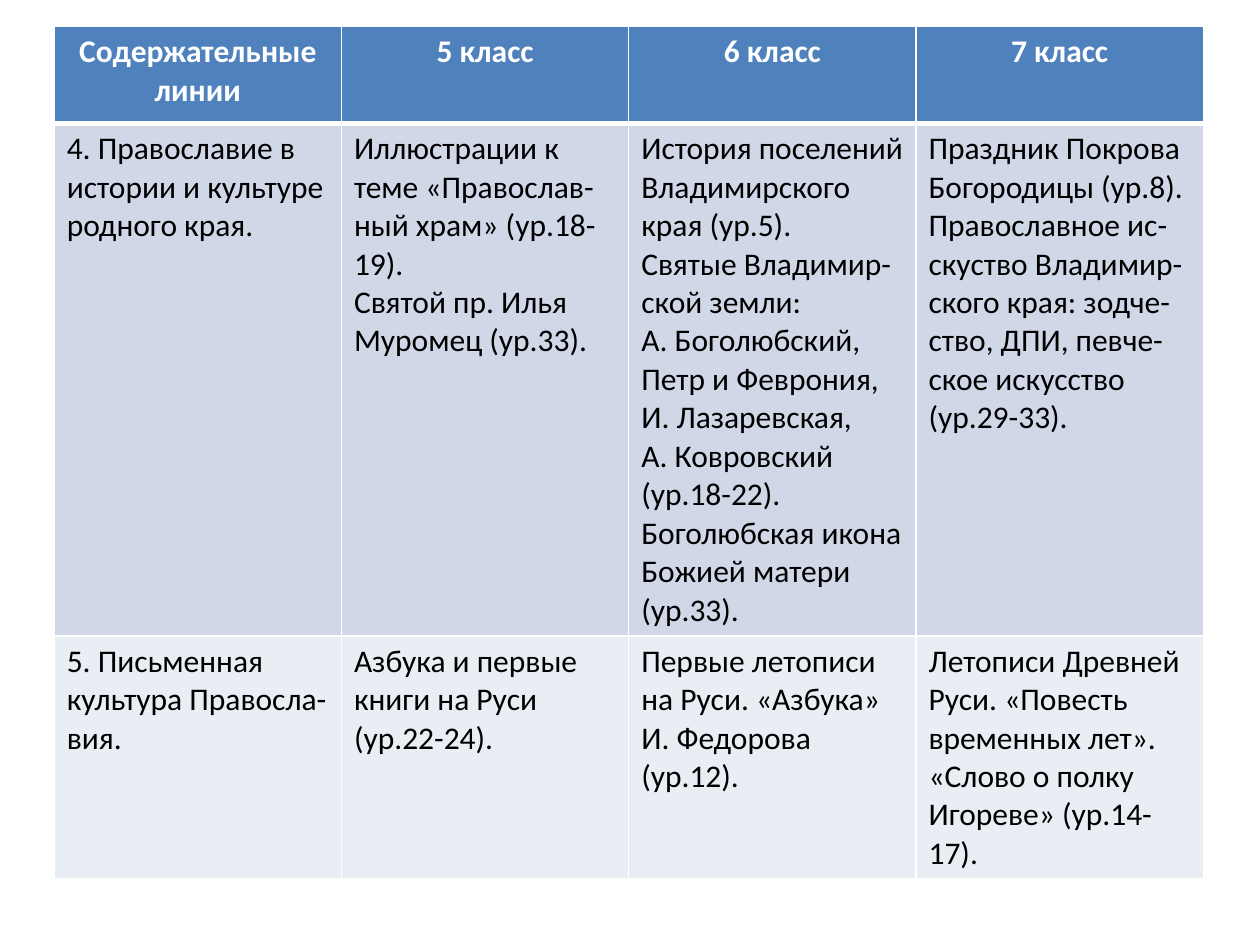
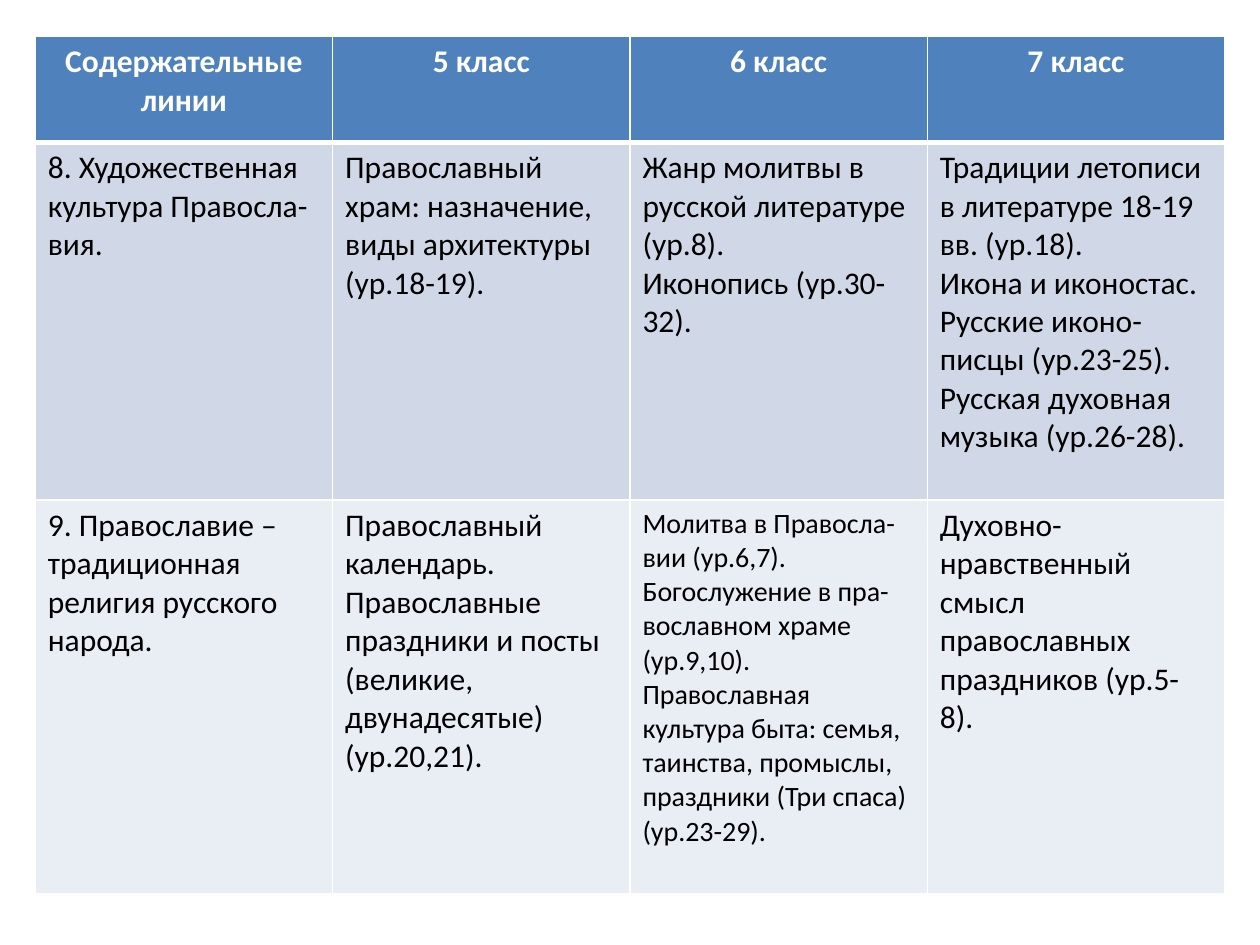
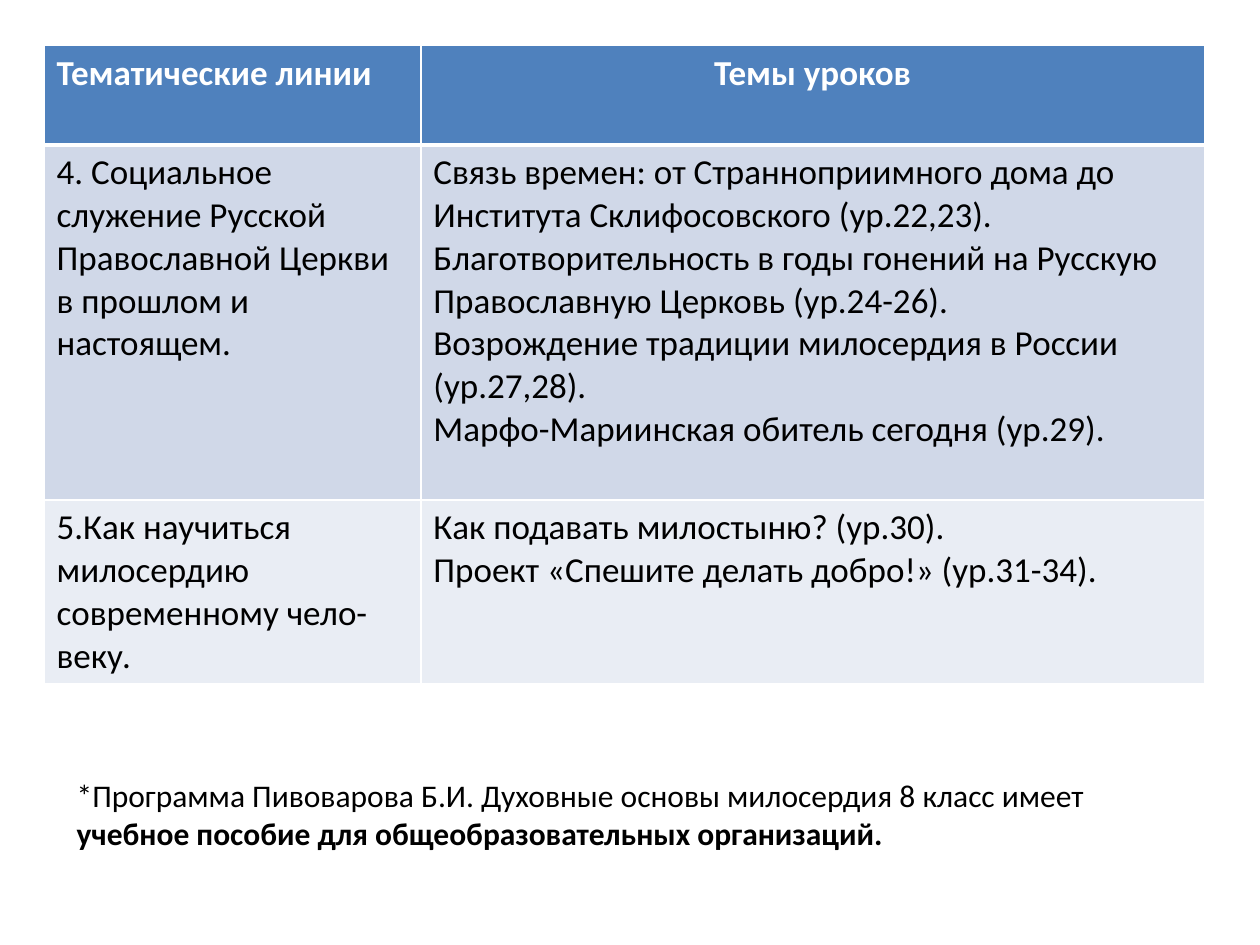
from pptx import Presentation
from pptx.dml.color import RGBColor
from pptx.enum.text import PP_ALIGN
from pptx.oxml import parse_xml
from pptx.oxml.ns import nsdecls
from pptx.util import Inches, Pt

FONT = "Calibri"
WHITE, BLACK = "FFFFFF", "000000"
HEADER_FILL = "4F81BD"
BAND_FILLS = ("D0D8E8", "E9EDF4")
GRADE_HEADERS = ["Содержательные линии", "5 класс", "6 класс", "7 класс"]

HISTORY_ROWS = [
    [
        "4. Православие в истории и культуре родного края.",
        "Иллюстрации к теме «Православ-ный храм» (ур.18-19).\n"
        "Святой пр. Илья Муромец (ур.33).",
        "История поселений Владимирского края (ур.5).\n"
        "Святые Владимир-ской земли:\n"
        "А. Боголюбский, Петр и Феврония, И. Лазаревская,\n"
        "А. Ковровский (ур.18-22).\n"
        "Боголюбская икона Божией матери (ур.33).",
        "Праздник Покрова Богородицы (ур.8).\n"
        "Православное ис-скуство Владимир-ского края: зодче-ство, ДПИ, "
        "певче-ское искусство (ур.29-33).",
    ],
    [
        "5. Письменная культура Правосла-вия.",
        "Азбука и первые книги на Руси (ур.22-24).",
        "Первые летописи на Руси. «Азбука» И. Федорова (ур.12).",
        "Летописи Древней Руси. «Повесть временных лет». "
        "«Слово о полку Игореве» (ур.14-17).",
    ],
]

ART_ROWS = [
    [
        "8. Художественная культура Правосла-вия.",
        "Православный храм: назначение, виды архитектуры (ур.18-19).",
        "Жанр молитвы в русской литературе (ур.8).\nИконопись (ур.30-32).",
        "Традиции летописи в литературе 18-19 вв. (ур.18).\n"
        "Икона и иконостас. Русские иконо-писцы (ур.23-25).\n"
        "Русская духовная музыка (ур.26-28).",
    ],
    [
        "9. Православие – традиционная религия русского народа.",
        "Православный календарь. Православные праздники и посты "
        "(великие, двунадесятые) (ур.20,21).",
        "Молитва в Правосла-вии (ур.6,7).\n"
        "Богослужение в пра-вославном храме (ур.9,10).\n"
        "Православная культура быта: семья, таинства, промыслы, "
        "праздники (Три спаса) (ур.23-29).",
        "Духовно-нравственный смысл православных праздников (ур.5-8).",
    ],
]

MERCY_ROWS = [
    [
        "4. Социальное служение Русской Православной Церкви в прошлом и настоящем.",
        "Связь времен: от Странноприимного дома до Института Склифосовского (ур.22,23).\n"
        "Благотворительность в годы гонений на Русскую Православную Церковь (ур.24-26).\n"
        "Возрождение традиции милосердия в России (ур.27,28).\n"
        "Марфо-Мариинская обитель сегодня (ур.29).",
    ],
    [
        "5.Как научиться милосердию современному чело-веку.",
        "Как подавать милостыню? (ур.30).\n"
        "Проект «Спешите делать добро!» (ур.31-34).",
    ],
]


def color(value):
    """Turn a hex string into a colour."""
    return RGBColor.from_string(value)


def format_text(text_frame, size, font_color=BLACK, bold=False, align=PP_ALIGN.LEFT):
    """Format every run of a text frame alike."""
    for paragraph in text_frame.paragraphs:
        paragraph.alignment = align
        for run in paragraph.runs:
            run.font.name = FONT
            run.font.size = Pt(size)
            run.font.bold = bold
            run.font.color.rgb = color(font_color)


def set_borders(cell, top=1, bottom=1):
    """Draw white borders of the given point widths round a cell."""
    properties = cell._tc.get_or_add_tcPr()
    for side, width in (("L", 1), ("R", 1), ("T", top), ("B", bottom)):
        properties.append(parse_xml(
            f'<a:ln{side} {nsdecls("a")} w="{Pt(width)}"><a:solidFill>'
            f'<a:srgbClr val="{WHITE}"/></a:solidFill></a:ln{side}>'))


def fill_cell(cell, text, fill, size, **text_format):
    """Write a cell on a solid fill."""
    cell.fill.solid()
    cell.fill.fore_color.rgb = color(fill)
    cell.text_frame.text = text
    format_text(cell.text_frame, size, **text_format)


def add_lesson_table(slide, left, top, widths, heights, headers, rows, size=18):
    """Add a table with a blue header and two shaded rows, and return it."""
    table = slide.shapes.add_table(
        len(heights), len(widths), Inches(left), Inches(top),
        Inches(sum(widths)), Inches(sum(heights))).table
    for column, width in zip(table.columns, widths):
        column.width = Inches(width)
    for row, height in zip(table.rows, heights):
        row.height = Inches(height)
    for index, header in enumerate(headers):
        cell = table.cell(0, index)
        set_borders(cell, bottom=3)
        fill_cell(cell, header, HEADER_FILL, size, font_color=WHITE, bold=True,
                  align=PP_ALIGN.CENTER)
    for row_index, (texts, fill) in enumerate(zip(rows, BAND_FILLS), start=1):
        for index, text in enumerate(texts):
            cell = table.cell(row_index, index)
            set_borders(cell, top=3 if row_index == 1 else 1)
            fill_cell(cell, text, fill, size)
    return table


def add_footnote(slide, left, top, width, height):
    """Add the note about the textbook, with a bold ending."""
    text_frame = slide.shapes.add_textbox(
        Inches(left), Inches(top), Inches(width), Inches(height)).text_frame
    text_frame.word_wrap = True
    paragraph = text_frame.paragraphs[0]
    paragraph.add_run().text = (
        "*Программа Пивоварова Б.И. Духовные основы милосердия 8 класс имеет ")
    ending = paragraph.add_run()
    ending.text = "учебное пособие для общеобразовательных организаций."
    format_text(text_frame, 18)
    ending.font.bold = True


def main():
    """Build the three slides and save them."""
    presentation = Presentation()
    presentation.slide_width, presentation.slide_height = Inches(10), Inches(7.5)
    blank = presentation.slide_layouts[6]
    history, art, mercy = (presentation.slides.add_slide(blank) for _ in range(3))

    add_lesson_table(history, 0.43, 0.21, [2.28] * 4, [0.77, 4.06, 1.93],
                     GRADE_HEADERS, HISTORY_ROWS)

    art_table = add_lesson_table(art, 0.28, 0.29, [2.36] * 4, [0.84, 2.84, 3.12],
                                 GRADE_HEADERS, ART_ROWS)
    format_text(art_table.cell(2, 2).text_frame, 16)

    mercy_table = add_lesson_table(mercy, 0.35, 0.36, [2.99, 6.22], [0.79, 2.82, 1.46],
                                   ["Тематические линии", "Темы уроков"],
                                   MERCY_ROWS, size=20)
    mercy_table.cell(0, 0).text_frame.paragraphs[0].alignment = PP_ALIGN.LEFT
    add_footnote(mercy, 0.51, 6.11, 8.9, 0.71)

    presentation.save("out.pptx")


if __name__ == "__main__":
    main()
